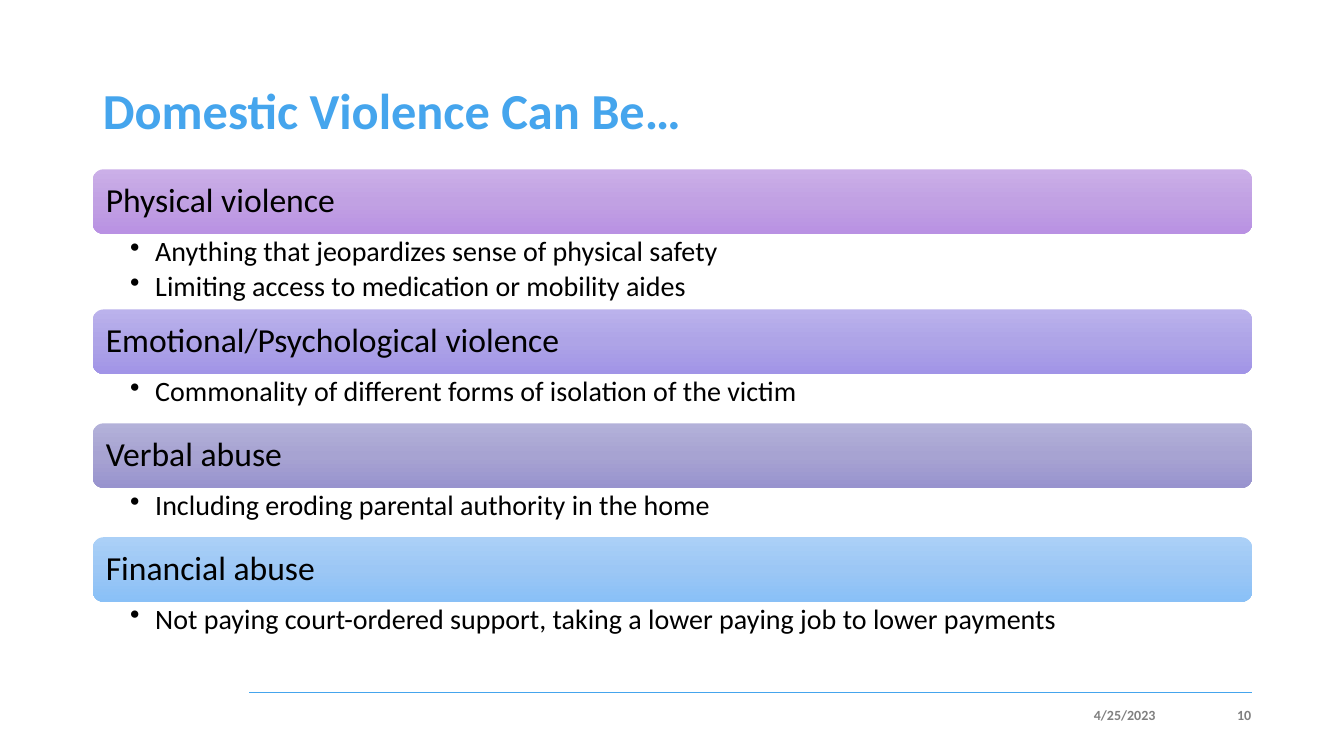
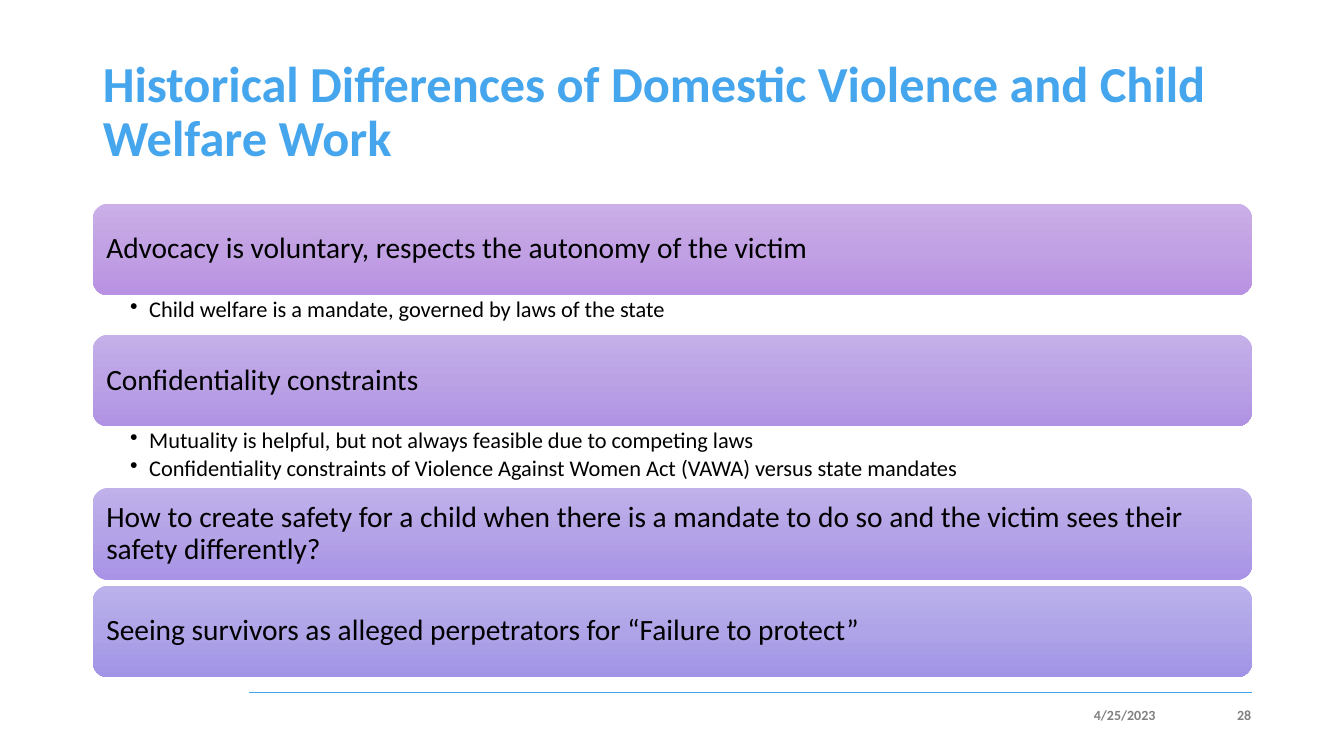
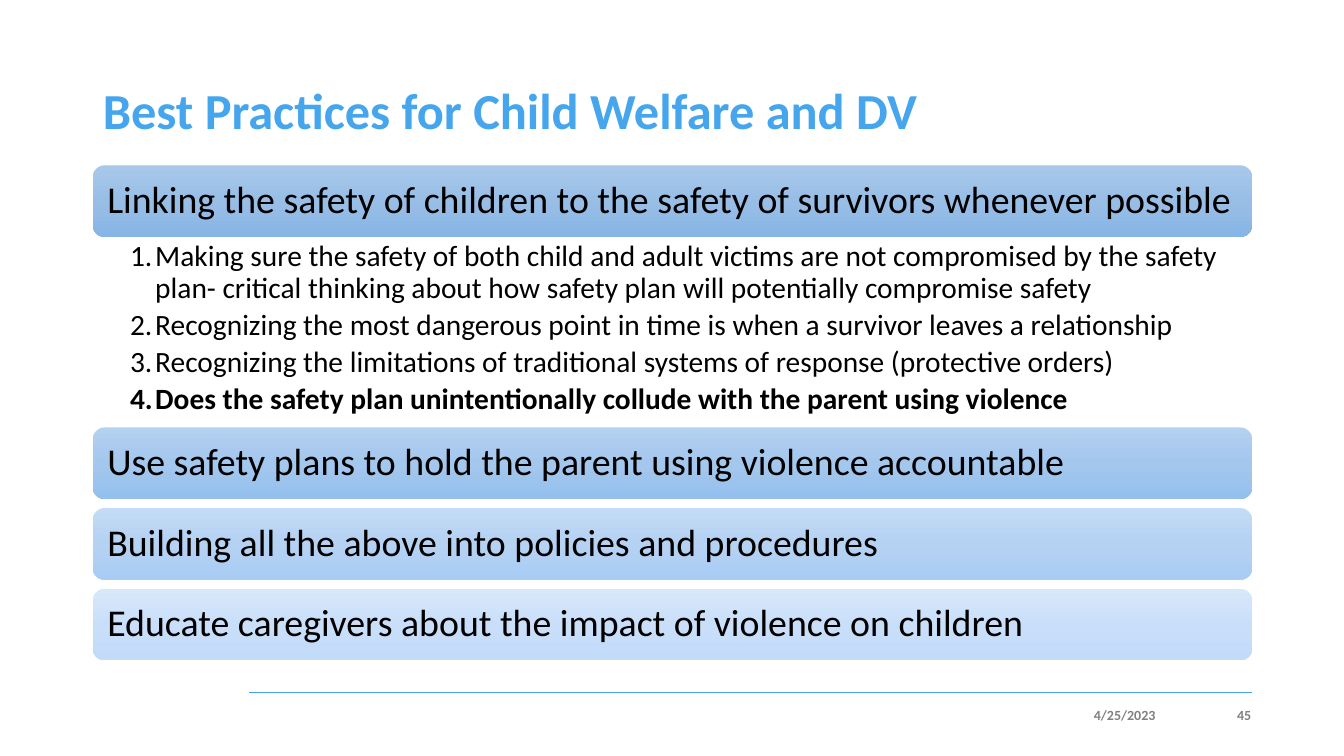
from copy import deepcopy
from dataclasses import dataclass
from typing import Optional

from pptx import Presentation
from pptx.dml.color import RGBColor
from pptx.enum.shapes import MSO_CONNECTOR as Connector, MSO_SHAPE as Shape
from pptx.enum.text import MSO_ANCHOR as Anchor, MSO_AUTO_SIZE as AutoSize, PP_ALIGN as Align
from pptx.oxml.ns import qn
from pptx.oxml.xmlchemy import OxmlElement
from pptx.util import Inches, Pt


@dataclass(frozen=True)
class Theme:
    font: str = "Calibri"
    accent: str = "45A5ED"
    ink: str = "000000"
    muted: str = "808080"
    title_size: int = 36
    footer_size: int = 10
    left: float = 0.92
    width: float = 11.5
    # Gradients from top to bottom
    orchid: tuple = ("CBAFE8", "C1A1E3", "B991E3")
    lilac: tuple = ("C5B0E9", "BAA2E5", "B092E4")
    lavender: tuple = ("C0B1EB", "B4A3E6", "A893E6")
    violet: tuple = ("BBB2EC", "AEA4E7", "A194E7")
    slate: tuple = ("B3B1D9", "A7A3D2", "9893CE")
    sky: tuple = ("ABD0F7", "9CC7F5", "89C0F7")
    blue: tuple = ("A7C8EA", "99BEE6", "86B5E6")
    light_blue: tuple = ("B3D1F1", "A4C7ED", "94C0EE")
    pale_blue: tuple = ("C3DBF6", "B5D2F3", "A8CCF4")
    ice_blue: tuple = ("D8E8FB", "C9DFF9", "C1DBF9")


THEME = Theme()


@dataclass
class Section:
    """A heading bar, the items below it, and the height down to the next bar."""
    heading: str
    gradient: tuple
    below: float
    items: tuple = ()
    key_item: Optional[int] = None


@dataclass
class StackStyle:
    top: float
    bar_height: float
    heading_size: int
    heading_inset: float
    item_size: int
    item_indent: float
    item_insets: tuple
    numbered: bool = False


def write(paragraph, text, *, size, color=THEME.ink, bold=False, align=Align.LEFT,
          line_spacing=0.9, space_after=0):
    paragraph.alignment = align
    paragraph.line_spacing = line_spacing
    paragraph.space_after = Pt(space_after)
    run = paragraph.add_run()
    run.text = text
    run.font.name = THEME.font
    run.font.size = Pt(size)
    run.font.bold = bold
    run.font.color.rgb = RGBColor.from_string(color)


def set_frame(frame, insets, anchor):
    """Insets run left, top, right, bottom."""
    frame.word_wrap = True
    frame.auto_size = AutoSize.NONE
    frame.vertical_anchor = anchor
    (frame.margin_left, frame.margin_top,
     frame.margin_right, frame.margin_bottom) = map(Inches, insets)


def add_text_frame(slide, left, top, width, height, insets, anchor=Anchor.TOP):
    box = slide.shapes.add_textbox(*map(Inches, (left, top, width, height)))
    set_frame(box.text_frame, insets, anchor)
    return box.text_frame


def set_marker(paragraph, indent, numbered):
    properties = paragraph._p.get_or_add_pPr()
    properties.set("marL", str(Inches(indent)))
    properties.set("indent", str(-Inches(indent)))
    marker = OxmlElement("a:buAutoNum" if numbered else "a:buChar")
    if numbered:
        marker.set("type", "arabicPeriod")
    else:
        marker.set("char", "•")
    properties.append(marker)


def fill_gradient(shape, colors):
    shape.fill.gradient()
    shape.fill.gradient_angle = 270
    stop_list = shape._element.spPr.find(".//" + qn("a:gsLst"))
    stop_list.insert(1, deepcopy(stop_list[0]))
    for stop, color, position in zip(shape.fill.gradient_stops, colors, (0, 0.5, 1)):
        stop.color.rgb = RGBColor.from_string(color)
        stop.position = position


def add_heading_bar(slide, section, top, style):
    bar = slide.shapes.add_shape(
        Shape.ROUNDED_RECTANGLE,
        *map(Inches, (THEME.left, top, THEME.width, style.bar_height)))
    bar.shadow.inherit = False
    bar.line.fill.background()
    fill_gradient(bar, section.gradient)
    set_frame(bar.text_frame, (style.heading_inset,) * 4, Anchor.MIDDLE)
    write(bar.text_frame.paragraphs[0], section.heading, size=style.heading_size)


def add_items(slide, section, top, style):
    frame = add_text_frame(slide, THEME.left, top, THEME.width, section.below,
                           style.item_insets)
    for index, item in enumerate(section.items):
        paragraph = frame.add_paragraph() if index else frame.paragraphs[0]
        set_marker(paragraph, style.item_indent, style.numbered)
        write(paragraph, item, size=style.item_size, bold=index == section.key_item,
              space_after=0.18 * style.item_size)


def add_stack(slide, sections, style):
    top = style.top
    for section in sections:
        add_heading_bar(slide, section, top, style)
        top += style.bar_height
        if section.items:
            add_items(slide, section, top, style)
        top += section.below


def add_footer(slide, number):
    rule = slide.shapes.add_connector(
        Connector.STRAIGHT, *map(Inches, (2.47, 6.87, 12.42, 6.87)))
    rule.line.color.rgb = RGBColor.from_string(THEME.accent)
    rule.line.width = Pt(0.5)
    rule._element.spPr.append(OxmlElement("a:effectLst"))
    for text, left, width in (("4/25/2023", 8.46, 3), (str(number), 11.62, 0.79)):
        frame = add_text_frame(slide, left, 6.95, width, 0.28, (0, 0.05, 0, 0.05),
                               Anchor.MIDDLE)
        write(frame.paragraphs[0], text, size=THEME.footer_size, color=THEME.muted,
              bold=True, align=Align.RIGHT, line_spacing=1)


def prepare_layout(prs):
    layout = prs.slide_layouts.get_by_name("Title Only")
    title = layout.placeholders[0]
    title.left, title.top, title.width, title.height = map(
        Inches, (THEME.left, 0.4, THEME.width, 1.45))
    set_frame(title.text_frame, (0.1, 0.05, 0.1, 0.05), Anchor.MIDDLE)
    return layout


def add_stack_slide(prs, layout, title, number, style, sections):
    slide = prs.slides.add_slide(layout)
    write(slide.shapes.title.text_frame.paragraphs[0], title,
          size=THEME.title_size, color=THEME.accent, bold=True)
    add_stack(slide, sections, style)
    add_footer(slide, number)


def main():
    prs = Presentation()
    prs.slide_width, prs.slide_height = Inches(13.33), Inches(7.5)
    layout = prepare_layout(prs)

    add_stack_slide(
        prs, layout, "Domestic Violence Can Be…", 10,
        StackStyle(top=1.68, bar_height=0.64, heading_size=24, heading_inset=0.1,
                   item_size=20, item_indent=0.25, item_insets=(0.37, 0.03, 0.16, 0.03)),
        [
            Section("Physical violence", THEME.orchid, 0.75,
                    ("Anything that jeopardizes sense of physical safety",
                     "Limiting access to medication or mobility aides")),
            Section("Emotional/Psychological violence", THEME.violet, 0.49,
                    ("Commonality of different forms of isolation of the victim",)),
            Section("Verbal abuse", THEME.slate, 0.49,
                    ("Including eroding parental authority in the home",)),
            Section("Financial abuse", THEME.sky, 0.49,
                    ("Not paying court-ordered support, taking a lower paying job "
                     "to lower payments",)),
        ])

    add_stack_slide(
        prs, layout,
        "Historical Differences of Domestic Violence and Child Welfare Work", 28,
        StackStyle(top=2.02, bar_height=0.91, heading_size=21, heading_inset=0.09,
                   item_size=16, item_indent=0.19, item_insets=(0.37, 0.03, 0.16, 0.03)),
        [
            Section("Advocacy is voluntary, respects the autonomy of the victim",
                    THEME.orchid, 0.39,
                    ("Child welfare is a mandate, governed by laws of the state",)),
            Section("Confidentiality constraints", THEME.lilac, 0.61,
                    ("Mutuality is helpful, but not always feasible due to competing laws",
                     "Confidentiality constraints of Violence Against Women Act (VAWA) "
                     "versus state mandates")),
            Section("How to create safety for a child when there is a mandate to do so "
                    "and the victim sees their safety differently?",
                    THEME.lavender, 0.06),
            Section("Seeing survivors as alleged perpetrators for “Failure to protect”",
                    THEME.violet, 0.06),
        ])

    add_stack_slide(
        prs, layout, "Best Practices for Child Welfare and DV", 45,
        StackStyle(top=1.64, bar_height=0.71, heading_size=27, heading_inset=0.11,
                   item_size=21, item_indent=0.25, item_insets=(0.37, 0.04, 0.21, 0.04),
                   numbered=True),
        [
            Section("Linking the safety of children to the safety of survivors "
                    "whenever possible", THEME.blue, 1.89,
                    ("Making sure the safety of both child and adult victims are not "
                     "compromised by the safety plan- critical thinking about how safety "
                     "plan will potentially compromise safety",
                     "Recognizing the most dangerous point in time is when a survivor "
                     "leaves a relationship",
                     "Recognizing the limitations of traditional systems of response "
                     "(protective orders)",
                     "Does the safety plan unintentionally collude with the parent "
                     "using violence"),
                    key_item=3),
            Section("Use safety plans to hold the parent using violence accountable",
                    THEME.light_blue, 0.09),
            Section("Building all the above into policies and procedures",
                    THEME.pale_blue, 0.09),
            Section("Educate caregivers about the impact of violence on children",
                    THEME.ice_blue, 0.09),
        ])

    prs.save("out.pptx")


if __name__ == "__main__":
    main()
